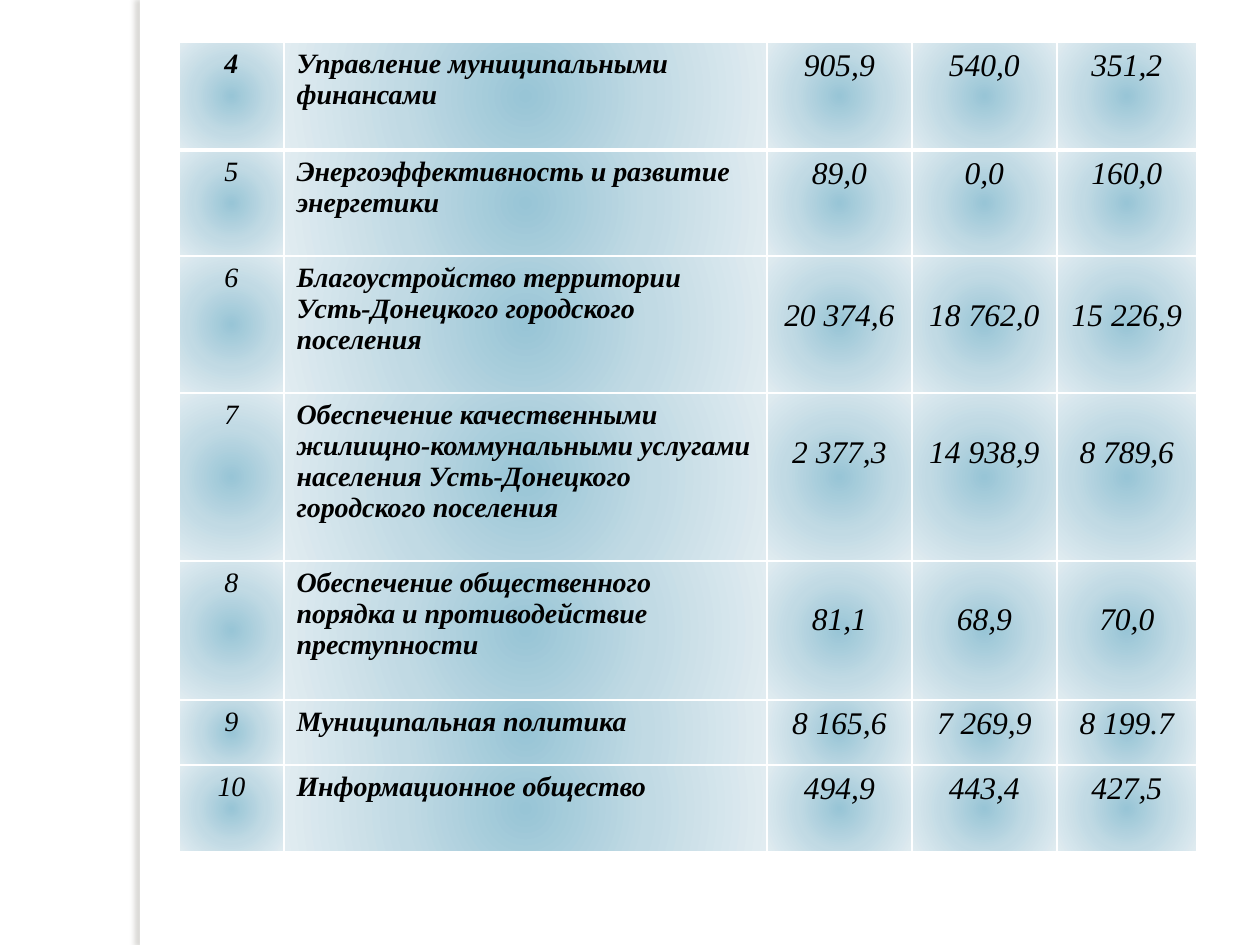
from lxml import etree
from pptx import Presentation
from pptx.dml.color import RGBColor
from pptx.enum.shapes import MSO_SHAPE
from pptx.enum.text import PP_ALIGN
from pptx.oxml import parse_xml
from pptx.oxml.ns import nsdecls, qn
from pptx.util import Pt

RECTANGLE = MSO_SHAPE.RECTANGLE
CENTER, LEFT = PP_ALIGN.CENTER, PP_ALIGN.LEFT
PX = 914400 // 126
FONT = "Times New Roman"
COLORS = {
    "page": "FFFFFF", "text": "000000", "border": "FFFFFF", "shadow": "736F63",
    "glow_center": "98C5D6", "glow_middle": "C1DAE4", "glow_edge": "E1ECF1",
}

PROGRAMS = [
    ("4", "Управление муниципальными финансами", "905,9", "540,0", "351,2"),
    ("5", "Энергоэффективность и развитие энергетики", "89,0", "0,0", "160,0"),
    ("6", "Благоустройство территории Усть-Донецкого городского поселения",
     "20 374,6", "18 762,0", "15 226,9"),
    ("7", "Обеспечение качественными жилищно-коммунальными услугами населения "
     "Усть-Донецкого городского поселения", "2 377,3", "14 938,9", "8 789,6"),
    ("8", "Обеспечение общественного порядка и противодействие преступности",
     "81,1", "68,9", "70,0"),
    ("9", "Муниципальная политика", "8 165,6", "7 269,9", "8 199.7"),
    ("10", "Информационное общество", "494,9", "443,4", "427,5"),
]
COLUMN_WIDTHS = [105, 483, 145, 145, 140]
ROW_HEIGHTS = [108, 106, 137, 168, 139, 65, 87]
TABLE_LEFT, TABLE_TOP = 179, 42
LOWERED_ROWS = {2, 3, 4}
NUMBER_DROP = 42


def px(length):
    return length * PX


def write(cell, text, size=18, bold=False, align=CENTER):
    paragraph = cell.text_frame.paragraphs[0]
    paragraph.alignment = align
    run = paragraph.add_run()
    run.text = text
    run.font.name = FONT
    run.font.size = Pt(size)
    run.font.bold = bold
    run.font.italic = True
    run.font.color.rgb = RGBColor.from_string(COLORS["text"])


def add_borders(cell, top, bottom):
    properties = cell._tc.get_or_add_tcPr()
    for side, points in (("L", 1), ("R", 1), ("T", top), ("B", bottom)):
        properties.append(parse_xml(
            f'<a:ln{side} {nsdecls("a")} w="{Pt(points)}"><a:solidFill>'
            f'<a:srgbClr val="{COLORS["border"]}"/></a:solidFill></a:ln{side}>'))


def add_glow(cell):
    stops = ((0, "glow_center"), (50, "glow_middle"), (100, "glow_edge"))
    stop_xml = "".join(
        f'<a:gs pos="{percent * 1000}"><a:srgbClr val="{COLORS[name]}"/></a:gs>'
        for percent, name in stops)
    cell._tc.get_or_add_tcPr().append(parse_xml(
        f'<a:gradFill {nsdecls("a")} rotWithShape="1"><a:gsLst>{stop_xml}</a:gsLst>'
        '<a:path path="circle"><a:fillToRect l="50000" t="50000" r="50000" b="50000"/>'
        '</a:path></a:gradFill>'))


def add_side_strip(slide):
    strip = slide.shapes.add_shape(RECTANGLE, px(140), 0, px(10), px(945))
    strip.shadow.inherit = False
    strip.fill.solid()
    strip.fill.fore_color.rgb = RGBColor.from_string(COLORS["page"])
    strip.line.fill.background()
    effects = strip._element.spPr.find(qn("a:effectLst"))
    shadow = etree.SubElement(effects, qn("a:outerShdw"), blurRad=str(Pt(3)),
                              dist=str(Pt(3)), dir="10800000", rotWithShape="0")
    color = etree.SubElement(shadow, qn("a:srgbClr"), val=COLORS["shadow"])
    etree.SubElement(color, qn("a:alpha"), val="25000")


def add_program_table(slide):
    table = slide.shapes.add_table(
        len(PROGRAMS), len(COLUMN_WIDTHS), px(TABLE_LEFT), px(TABLE_TOP),
        px(sum(COLUMN_WIDTHS)), px(sum(ROW_HEIGHTS))).table
    for column, width in zip(table.columns, COLUMN_WIDTHS):
        column.width = px(width)
    for index, (row, height) in enumerate(zip(table.rows, ROW_HEIGHTS)):
        row.height = px(height)
        number, title, *amounts = row.cells
        write(number, PROGRAMS[index][0], size=16, bold=index == 0)
        write(title, PROGRAMS[index][1], size=16, bold=True, align=LEFT)
        for amount, value in zip(amounts, PROGRAMS[index][2:]):
            write(amount, value)
            if index in LOWERED_ROWS:
                amount.margin_top = px(NUMBER_DROP)
        for cell in row.cells:
            add_borders(cell, top=3 if index == 1 else 1, bottom=3 if index == 0 else 1)
            add_glow(cell)


def main():
    presentation = Presentation()
    presentation.slide_width = px(1260)
    presentation.slide_height = px(945)
    slide = presentation.slides.add_slide(presentation.slide_layouts[6])
    slide.background.fill.solid()
    slide.background.fill.fore_color.rgb = RGBColor.from_string(COLORS["page"])
    add_side_strip(slide)
    add_program_table(slide)
    presentation.save("out.pptx")


if __name__ == "__main__":
    main()
